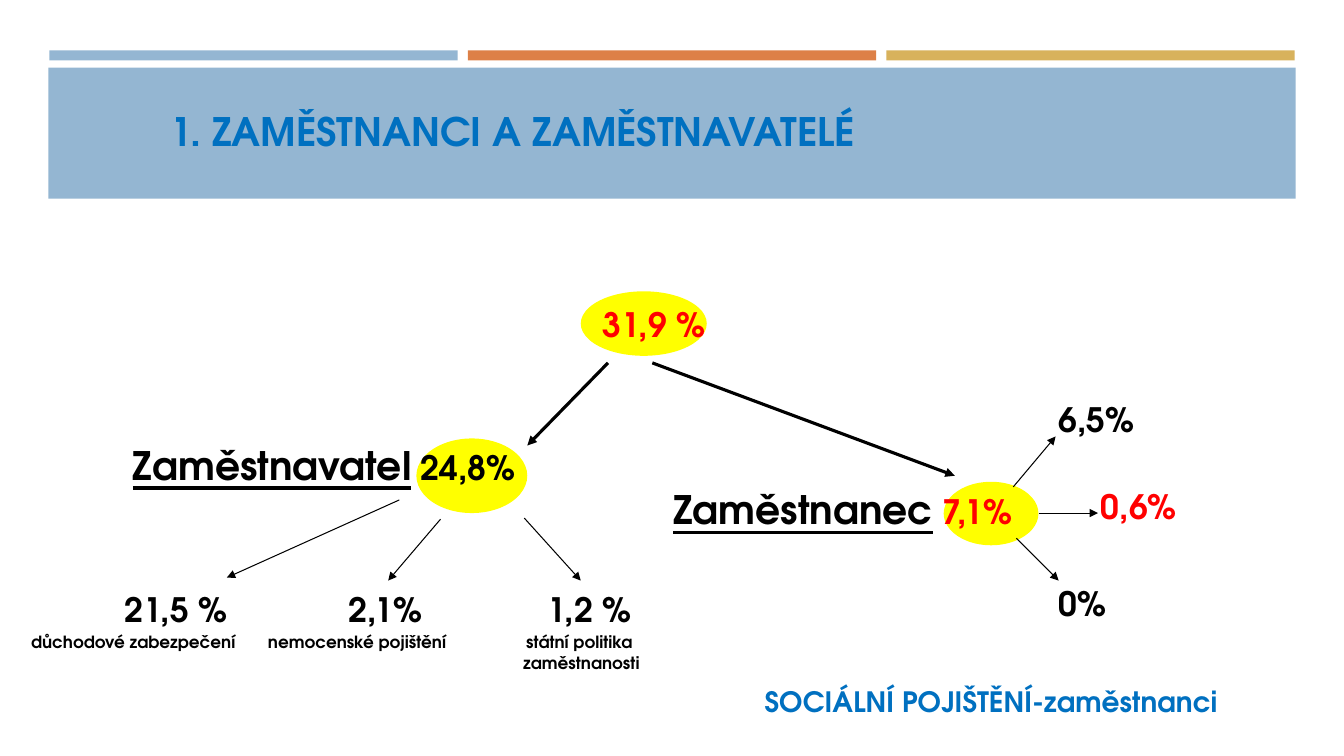
from lxml import etree
from pptx import Presentation
from pptx.dml.color import RGBColor
from pptx.enum.shapes import MSO_CONNECTOR, MSO_SHAPE
from pptx.enum.text import MSO_ANCHOR, PP_ALIGN
from pptx.oxml.ns import qn
from pptx.util import Inches, Pt

STRAIGHT = MSO_CONNECTOR.STRAIGHT
RECTANGLE, OVAL = MSO_SHAPE.RECTANGLE, MSO_SHAPE.OVAL
TOP, BOTTOM = MSO_ANCHOR.TOP, MSO_ANCHOR.BOTTOM
LEFT, CENTER = PP_ALIGN.LEFT, PP_ALIGN.CENTER
FONT = "TeX Gyre Adventor"
COLORS = {
    "blue": "94B6D2", "orange": "DD8047", "gold": "D8B25C", "yellow": "FFFF00",
    "black": "000000", "red": "FF0000", "heading": "0070C0",
}


def color(name):
    return RGBColor.from_string(COLORS[name])


class Slide:
    def __init__(self, page):
        self.page = page

    def shape(self, kind, left, top, width, height, fill):
        shape = self.page.shapes.add_shape(
            kind, Inches(left), Inches(top), Inches(width), Inches(height))
        shape.shadow.inherit = False
        shape.fill.solid()
        shape.fill.fore_color.rgb = color(fill)
        shape.line.fill.background()

    def add_spans(self, box, spans, align=LEFT, anchor=TOP, spacing=1.0):
        """Fill the box with one paragraph of (text, size, color, underline) spans."""
        frame = box.text_frame
        frame.word_wrap = True
        frame.vertical_anchor = anchor
        para = frame.paragraphs[0]
        para.alignment = align
        para.line_spacing = spacing
        for text, size, ink, underline in spans:
            span = para.add_run()
            span.text = text
            span.font.name = FONT
            span.font.size = Pt(size)
            span.font.bold = True
            span.font.underline = underline
            span.font.color.rgb = color(ink)

    def text(self, left, top, width, height, spans, **style):
        box = self.page.shapes.add_textbox(
            Inches(left), Inches(top), Inches(width), Inches(height))
        self.add_spans(box, spans, **style)

    def title(self, left, top, width, height, spans, **style):
        """Place the title placeholder in front of the shapes drawn so far."""
        box = self.page.shapes.title
        box.left, box.top = Inches(left), Inches(top)
        box.width, box.height = Inches(width), Inches(height)
        self.add_spans(box, spans, **style)
        self.page.shapes.element.append(box.element)

    def arrow(self, x1, y1, x2, y2, weight):
        line = self.page.shapes.add_connector(
            STRAIGHT, Inches(x1), Inches(y1), Inches(x2), Inches(y2))
        line.line.color.rgb = color("black")
        line.line.width = Pt(weight)
        properties = line.element.spPr
        etree.SubElement(properties.find(qn("a:ln")), qn("a:tailEnd"), type="triangle")
        etree.SubElement(properties, qn("a:effectLst"))


def main():
    deck = Presentation()
    deck.slide_width, deck.slide_height = Inches(13.33), Inches(7.5)
    slide = Slide(deck.slides.add_slide(deck.slide_layouts[5]))

    for index, fill in enumerate(("blue", "orange", "gold")):
        slide.shape(RECTANGLE, 0.49 + 4.15 * index, 0.5, 4.05, 0.1, fill)
    slide.shape(RECTANGLE, 0.48, 0.67, 12.37, 1.3, "blue")
    heading_style = {"align": CENTER, "anchor": BOTTOM, "spacing": 0.9}
    slide.title(1.22, 0.97, 7.84, 0.62,
                [("1. ZAMĚSTNANCI A ZAMĚSTNAVATELÉ ", 28, "heading", False)],
                **heading_style)

    for oval in ((9.36, 4.78, 0.94, 0.63), (4.13, 4.35, 1.1, 0.74),
                 (5.76, 2.89, 1.25, 0.64)):
        slide.shape(OVAL, *oval, "yellow")

    for left, top, payer, rate, ink in (
            (1.22, 4.33, "Zaměstnavatel", "24,8%", "black"),
            (6.58, 4.77, "Zaměstnanec", "7,1%", "red")):
        slide.text(left, top, 4.6, 0.57, [
            (payer, 28, "black", True), (" ", 24, ink, False), (rate, 24, ink, False)])

    for left, top, rate, ink in (
            (5.88, 2.97, "31,9 %", "red"),
            (10.4, 3.91, "6,5%", "black"),
            (10.82, 4.77, "0,6%", "red"),
            (10.4, 5.73, "0%", "black"),
            (1.14, 5.79, "21,5 %", "black"),
            (3.36, 5.79, "2,1%", "black"),
            (5.33, 5.79, "1,2 %", "black")):
        slide.text(left, top, 1.46, 0.5, [(rate, 24, ink, False)])

    for left, top, purpose in (
            (0.21, 6.22, "důchodové zabezpečení"),
            (2.56, 6.22, "nemocenské pojištění"),
            (5.12, 6.22, "státní politika"),
            (5.09, 6.43, "zaměstnanosti")):
        slide.text(left, top, 2.4, 0.3, [(purpose, 12, "black", False)])

    for ends in ((6.03, 3.6, 5.23, 4.42), (6.47, 3.6, 9.47, 4.72)):
        slide.arrow(*ends, 2.25)
    for ends in ((10.05, 4.83, 10.47, 4.33), (10.3, 5.09, 10.89, 5.09),
                 (10.08, 5.34, 10.5, 5.76), (5.2, 5.14, 5.76, 5.76),
                 (4.37, 5.15, 3.85, 5.76), (3.96, 4.96, 2.25, 5.73)):
        slide.arrow(*ends, 0.75)

    slide.text(7.34, 6.56, 5.06, 0.62,
               [("SOCIÁLNÍ POJIŠTĚNÍ-zaměstnanci ", 20, "heading", False)],
               **heading_style)
    deck.save("out.pptx")


if __name__ == "__main__":
    main()
